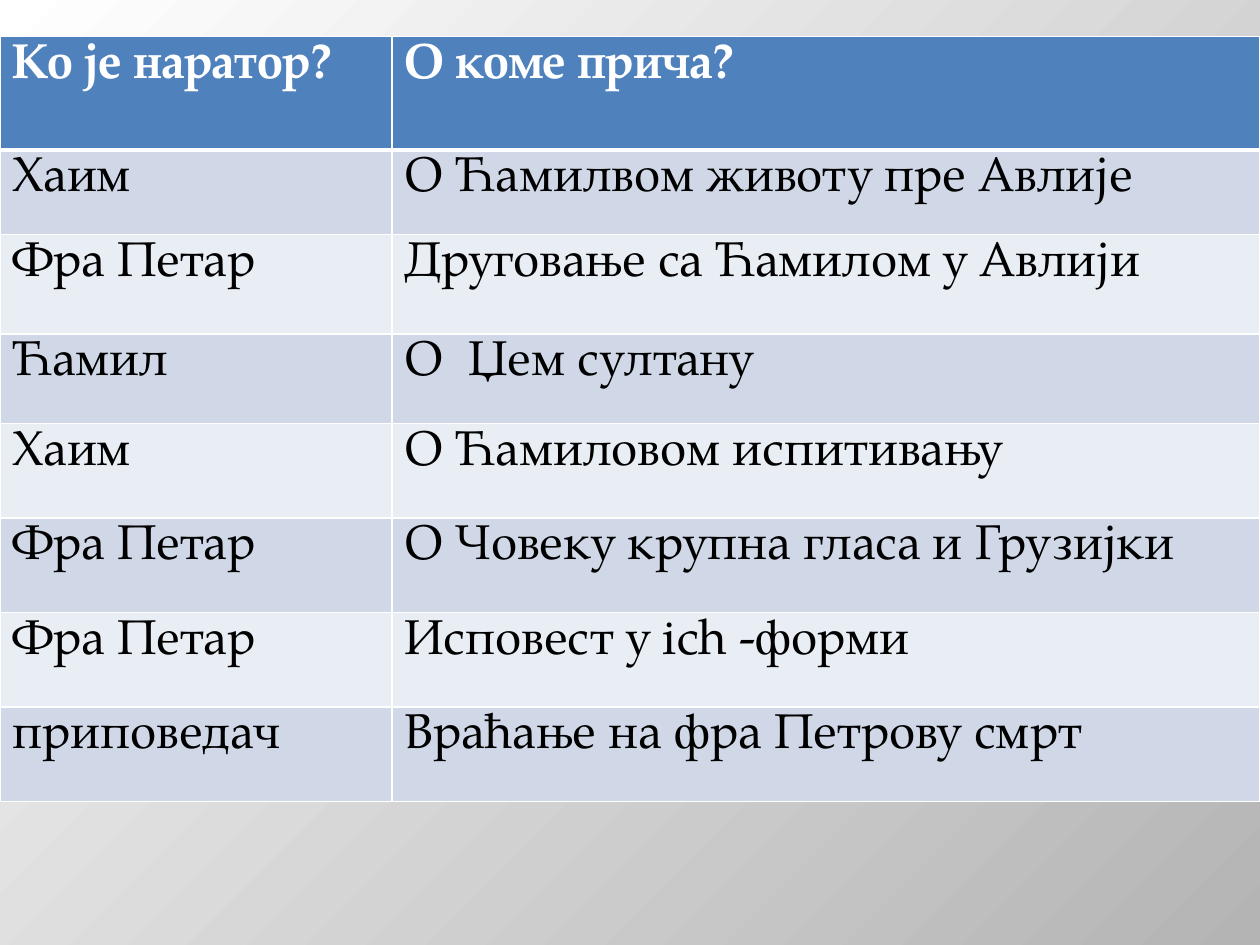
from lxml import etree
from pptx import Presentation
from pptx.dml.color import RGBColor
from pptx.enum.text import MSO_ANCHOR
from pptx.oxml.ns import qn
from pptx.util import Inches, Pt

TOP = MSO_ANCHOR.TOP
FONT = "TeX Gyre Pagella"
WHITE = "FFFFFF"
HEADER_FILL = "4F81BD"
BAND_FILLS = ("E9EDF4", "D0D8E8")
COLUMN_WIDTHS = (3.11, 6.89)
ROW_HEIGHTS = (0.9, 0.67, 0.79, 0.71) + (0.75,) * 4
NARRATORS = (
    ("Ко је наратор?", "О коме прича?"),
    ("Хаим", "О Ћамилвом животу пре Авлије"),
    ("Фра Петар", "Друговање са Ћамилом у Авлији"),
    ("Ћамил", "О  Џем султану"),
    ("Хаим", "О Ћамиловом испитивању"),
    ("Фра Петар", "О Човеку крупна гласа и Грузијки"),
    ("Фра Петар", "Исповест у ich -форми"),
    ("приповедач", "Враћање на фра Петрову смрт"),
)


def rgb(value):
    return RGBColor.from_string(value)


def set_background(slide, start, end):
    fill = slide.background.fill
    fill.gradient()
    for stop, color in zip(fill.gradient_stops, (start, end)):
        stop.color.rgb = rgb(color)
    gradient = slide.element.find(".//" + qn("a:gradFill"))
    gradient.remove(gradient.find(qn("a:lin")))
    circle = etree.SubElement(gradient, qn("a:path"), path="circle")
    etree.SubElement(circle, qn("a:fillToRect"), r="100000", b="100000")


def write_text(cell, text, size=28, color="000000", bold=False):
    paragraph = cell.text_frame.paragraphs[0]
    run = paragraph.add_run()
    run.text = text
    run.font.name = FONT
    run.font.size = Pt(size)
    run.font.bold = bold
    run.font.color.rgb = rgb(color)


def set_borders(cell, bottom=1):
    properties = cell._tc.get_or_add_tcPr()
    widths = {"a:lnL": 1, "a:lnR": 1, "a:lnT": 1, "a:lnB": bottom}
    for position, (side, width) in enumerate(widths.items()):
        line = etree.Element(qn(side), w=str(Pt(width)))
        solid = etree.SubElement(line, qn("a:solidFill"))
        etree.SubElement(solid, qn("a:srgbClr"), val=WHITE)
        properties.insert(position, line)


def fill_cell(cell, text, row):
    header = row == 0
    cell.vertical_anchor = TOP
    cell.fill.solid()
    cell.fill.fore_color.rgb = rgb(HEADER_FILL if header else BAND_FILLS[row % 2])
    write_text(cell, text, color=WHITE if header else "000000", bold=header)
    set_borders(cell, bottom=3 if header else 1)


def add_narrator_table(slide):
    table = slide.shapes.add_table(
        len(NARRATORS), len(COLUMN_WIDTHS),
        Inches(0), Inches(0.29), Inches(10), Inches(sum(ROW_HEIGHTS)),
    ).table
    for column, width in zip(table.columns, COLUMN_WIDTHS):
        column.width = Inches(width)
    for row, (texts, height) in enumerate(zip(NARRATORS, ROW_HEIGHTS)):
        table.rows[row].height = Inches(height)
        for column, text in enumerate(texts):
            fill_cell(table.cell(row, column), text, row)


def main():
    presentation = Presentation()
    presentation.slide_width = Inches(10)
    presentation.slide_height = Inches(7.5)
    slide = presentation.slides.add_slide(presentation.slide_layouts[6])
    set_background(slide, WHITE, "B4B4B4")
    add_narrator_table(slide)
    presentation.save("out.pptx")


if __name__ == "__main__":
    main()
